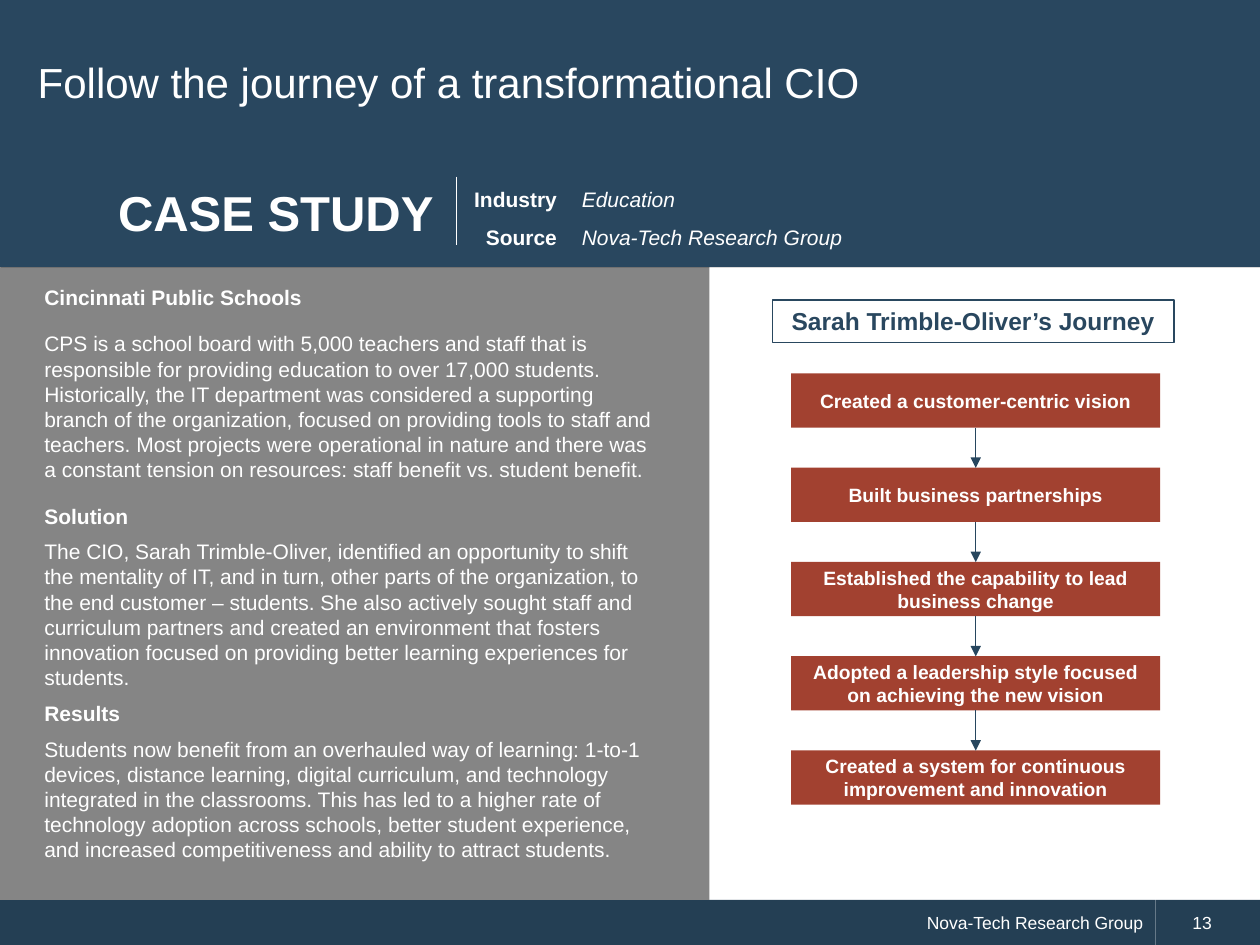
"""Build the case study slide about a transformational CIO."""
from dataclasses import dataclass
from itertools import pairwise
from typing import Optional

from lxml.etree import SubElement
from pptx import Presentation
from pptx.dml.color import RGBColor
from pptx.enum.shapes import MSO_CONNECTOR as Connector, MSO_SHAPE as Preset
from pptx.enum.text import MSO_ANCHOR as Anchor, MSO_AUTO_SIZE as AutoSize, PP_ALIGN as Align
from pptx.oxml.ns import qn
from pptx.util import Cm, Pt

COLORS = {
    "navy": "29475F",
    "footer": "243F54",
    "arrow": "27465E",
    "gray": "858585",
    "red": "A24130",
    "white": "FFFFFF",
    "black": "000000",
}
COMPANY = "Nova-Tech Research Group"
STEP_LEFT, STEP_TOP, STEP_WIDTH, STEP_HEIGHT, STEP_PITCH = 15.95, 7.53, 7.44, 1.09, 1.9
STEPS = [
    "Created a customer-centric vision",
    "Built business partnerships",
    "Established the capability to lead business change",
    "Adopted a leadership style focused on achieving the new vision",
    "Created a system for continuous improvement and innovation",
]


@dataclass
class Block:
    """A rectangle in centimetres with its text and look."""
    at: tuple[float, float, float, float]
    text: str = ""
    fill: Optional[str] = None
    line: Optional[str] = None
    color: str = "white"
    size: float = 12
    bold: bool = False
    italic: bool = False
    align: Align = Align.LEFT
    anchor: Anchor = Anchor.MIDDLE
    spacing: float = 1.0
    indent: float = 0
    inset: float = 0.25


@dataclass
class Passage:
    """A paragraph of the case study."""
    text: str
    bold: bool = False
    before: float = 0


STORY = [
    Passage("Cincinnati Public Schools", bold=True),
    Passage(
        "CPS is a school board with 5,000 teachers and staff that is responsible for providing "
        "education to over 17,000 students. Historically, the IT department was considered a "
        "supporting branch of the organization, focused on providing tools to staff and teachers. "
        "Most projects were operational in nature and there was a constant tension on resources: "
        "staff benefit vs. student benefit.", before=6),
    Passage("Solution", bold=True, before=6),
    Passage(
        "The CIO, Sarah Trimble-Oliver, identified an opportunity to shift the mentality of IT, "
        "and in turn, other parts of the organization, to the end customer – students. She also "
        "actively sought staff and curriculum partners and created an environment that fosters "
        "innovation focused on providing better learning experiences for students."),
    Passage("Results", bold=True),
    Passage(
        "Students now benefit from an overhauled way of learning: 1-to-1 devices, distance "
        "learning, digital curriculum, and technology integrated in the classrooms. This has led "
        "to a higher rate of technology adoption across schools, better student experience, and "
        "increased competitiveness and ability to attract students."),
]


def rgb(name: str) -> RGBColor:
    return RGBColor.from_string(COLORS[name])


def place(shape, at: tuple[float, float, float, float]) -> None:
    shape.left, shape.top, shape.width, shape.height = map(Cm, at)


def style_runs(para, size: float, color: str, bold: bool = False, italic: bool = False) -> None:
    for span in para.runs:
        font = span.font
        font.name, font.size, font.bold, font.italic = "Arial", Pt(size), bold, italic
        font.color.rgb = rgb(color)


def add_block(page, block: Block):
    box = page.shapes.add_shape(Preset.RECTANGLE, *map(Cm, block.at))
    box.shadow.inherit = False
    for paint, name in ((box.fill, block.fill), (box.line.fill, block.line)):
        if name:
            paint.solid()
            paint.fore_color.rgb = rgb(name)
        else:
            paint.background()
    if block.line:
        box.line.width = Pt(0.75)
    frame = box.text_frame
    frame.word_wrap = True
    frame.vertical_anchor = block.anchor
    frame.margin_left = Cm(block.inset)
    frame.text = block.text
    for para in frame.paragraphs:
        para.alignment = block.align
        para.line_spacing = block.spacing
        para._p.get_or_add_pPr().set("marL", str(Cm(block.indent)))
        style_runs(para, block.size, block.color, block.bold, block.italic)
    return box


def add_line(page, color: str, start: tuple = (0, 0), end: tuple = (0, 0)):
    line = page.shapes.add_connector(Connector.STRAIGHT, *map(Cm, start + end))
    line.line.color.rgb = rgb(color)
    line.line.width = Pt(0.75)
    SubElement(line._element.spPr, qn("a:effectLst"))
    return line


def add_arrow(page, upper, lower) -> None:
    arrow = add_line(page, "arrow")
    arrow.begin_connect(upper, 2)
    arrow.end_connect(lower, 0)
    SubElement(arrow.line._get_or_add_ln(), qn("a:tailEnd"), type="triangle")


def add_soft_shadow(box) -> None:
    effects = box._element.spPr.find(qn("a:effectLst"))
    shadow = SubElement(effects, qn("a:outerShdw"), blurRad="0", dist=str(Pt(1)), dir="2700000")
    color = SubElement(shadow, qn("a:srgbClr"), val=COLORS["black"])
    SubElement(color, qn("a:alpha"), val="14000")


def fill_title(title) -> None:
    place(title, (0, 0, 25.4, 3.3))
    title.fill.solid()
    title.fill.fore_color.rgb = rgb("navy")
    frame = title.text_frame
    frame.text = "Follow the journey of a transformational CIO"
    frame.auto_size = AutoSize.NONE
    frame.vertical_anchor = Anchor.MIDDLE
    frame.margin_left = frame.margin_right = Cm(0.76)
    frame.margin_top = frame.margin_bottom = Cm(0.25)
    para = frame.paragraphs[0]
    para.alignment = Align.LEFT
    para.space_after = Pt(8)
    style_runs(para, 24, "white")


def fill_story(body) -> None:
    place(body, (0.64, 5.61, 12.93, 11.94))
    frame = body.text_frame
    frame.text = "\n".join(passage.text for passage in STORY)
    frame.auto_size = AutoSize.NONE
    for para, passage in zip(frame.paragraphs, STORY):
        para.space_before, para.space_after = Pt(passage.before), Pt(6)
        properties = para._p.get_or_add_pPr()
        properties.set("marL", "0")
        properties.set("indent", "0")
        SubElement(properties, qn("a:buNone"))
        style_runs(para, 12, "white", passage.bold)


def main() -> None:
    deck = Presentation()
    deck.slide_width, deck.slide_height = Cm(25.4), Cm(19.05)
    page = deck.slides.add_slide(deck.slide_layouts[1])
    title, body = page.placeholders
    fill_title(title)

    add_block(page, Block((0, 18.14, 23.29, 0.91), COMPANY, "footer", size=10, align=Align.RIGHT, indent=0.74))
    add_block(page, Block((23.29, 18.14, 2.11, 0.91), "13", "footer", size=10, indent=0.5))
    add_block(page, Block((0, 5.23, 14.3, 12.91), fill="gray"))
    page.shapes._spTree.append(body._element)
    fill_story(body)

    band = add_block(page, Block((0, 3.18, 25.4, 2.2), "CASE STUDY", "navy", size=28, bold=True, indent=0.48, inset=1.9))
    add_soft_shadow(band)
    add_block(page, Block((9.07, 3.38, 2.41, 1.7), "Industry\nSource", "navy", bold=True,
                          align=Align.RIGHT, anchor=Anchor.TOP, spacing=1.5))
    add_line(page, "white", (9.2, 3.56), (9.2, 4.93))
    add_block(page, Block((11.48, 3.38, 10.39, 1.8), f"Education\n{COMPANY}", italic=True,
                          anchor=Anchor.TOP, spacing=1.5))

    add_block(page, Block((15.57, 6.05, 8.1, 0.86), "Sarah Trimble-Oliver’s Journey", line="navy", color="navy",
                          size=14, bold=True, align=Align.CENTER, anchor=Anchor.TOP))
    boxes = [
        add_block(page, Block((STEP_LEFT, STEP_TOP + row * STEP_PITCH, STEP_WIDTH, STEP_HEIGHT), text, "red",
                              size=11, bold=True, align=Align.CENTER))
        for row, text in enumerate(STEPS)
    ]
    for upper, lower in pairwise(boxes):
        add_arrow(page, upper, lower)
    deck.save("out.pptx")


if __name__ == "__main__":
    main()
